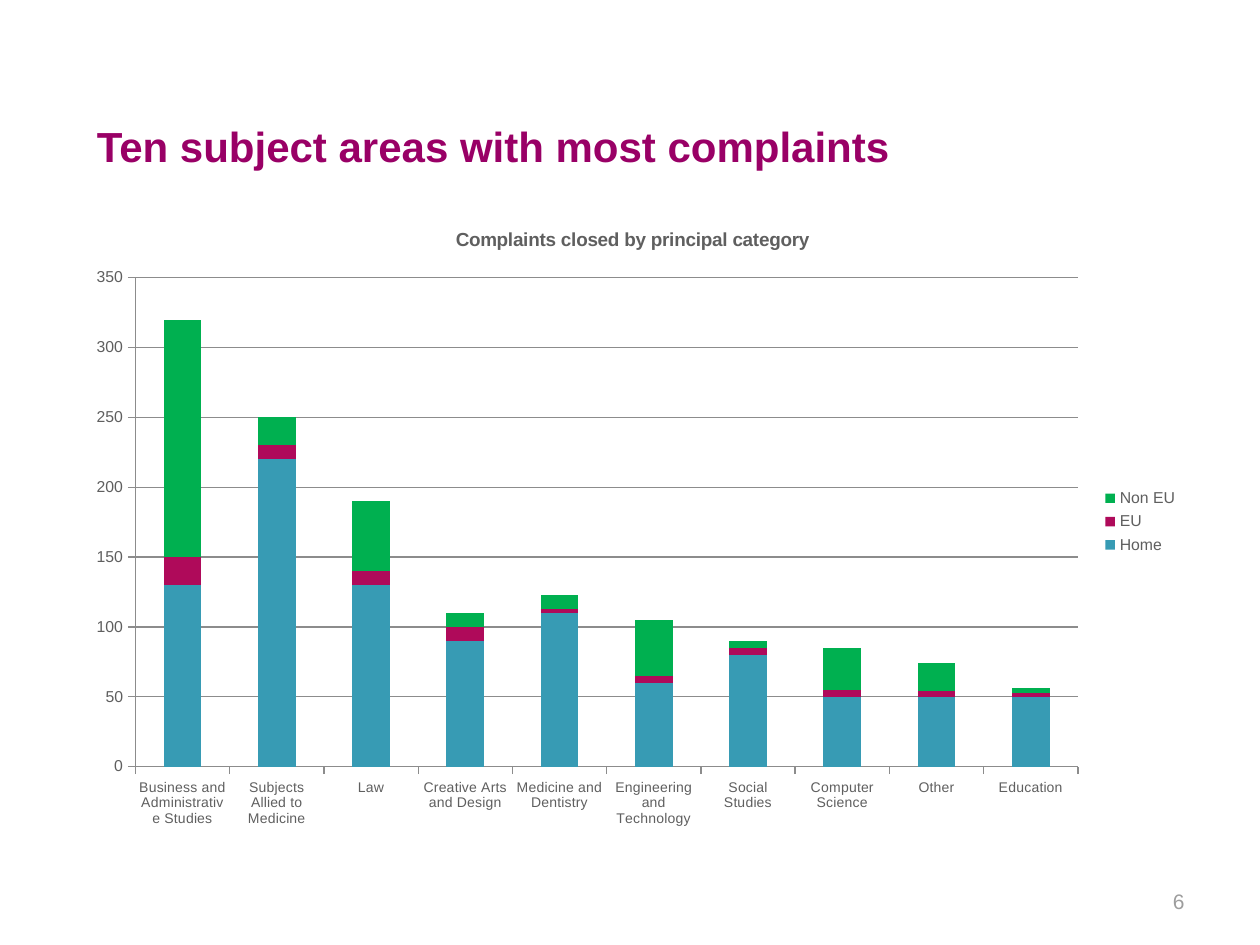
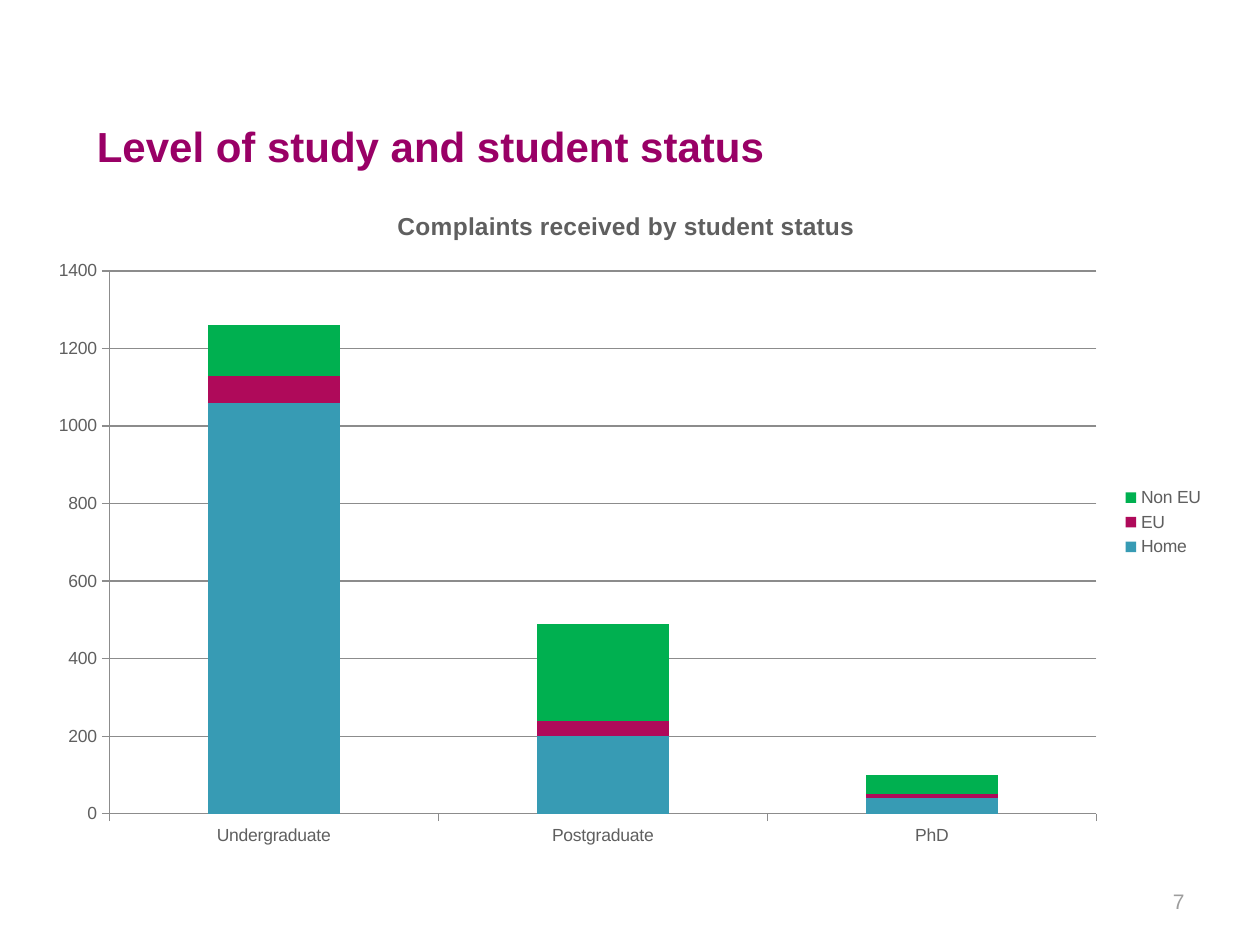
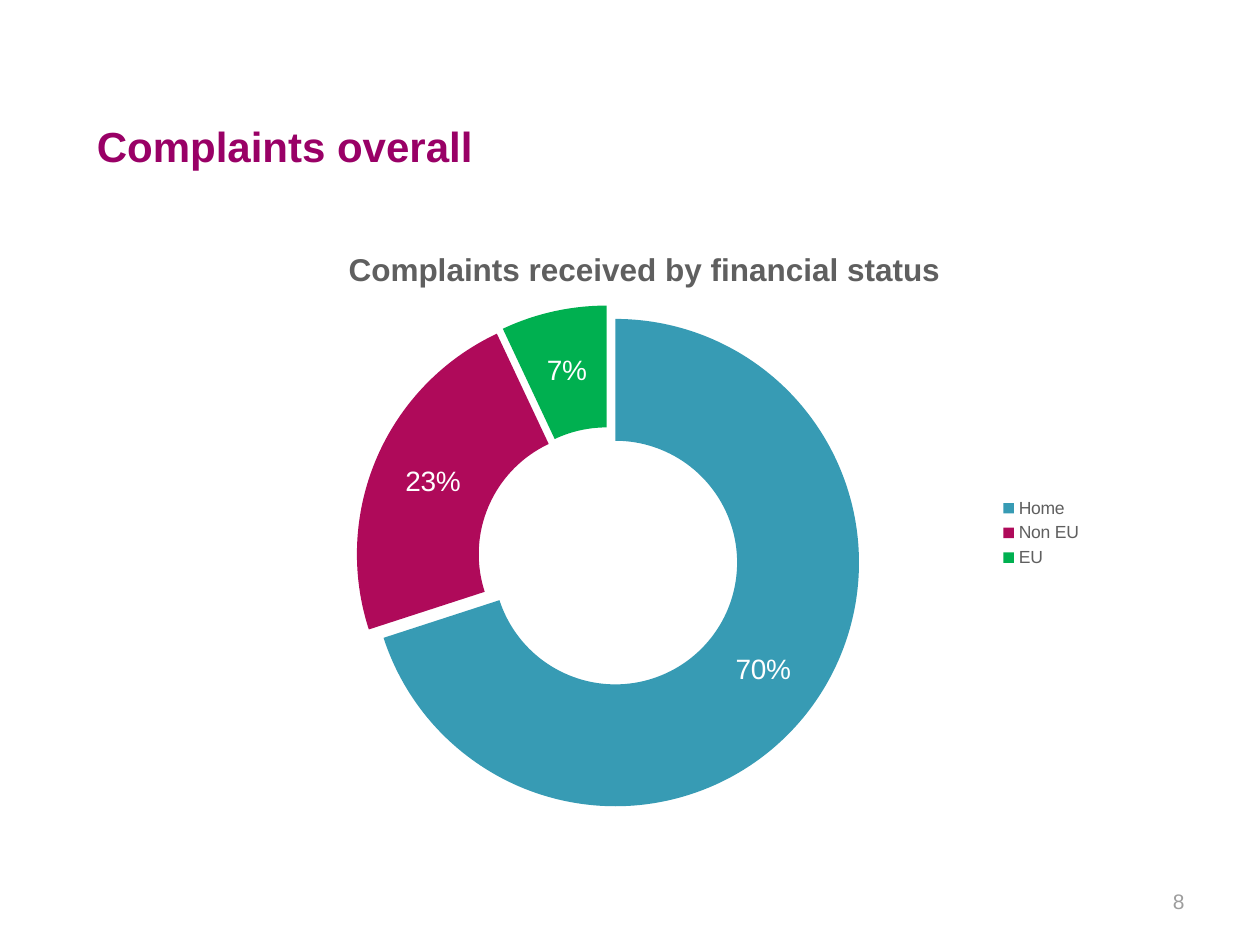
"""Build three slides of charts on student complaints."""
from lxml.etree import SubElement
from pptx import Presentation
from pptx.chart.data import CategoryChartData as Data
from pptx.dml.color import RGBColor
from pptx.enum.chart import XL_CHART_TYPE as Kind, XL_LEGEND_POSITION as Side, XL_TICK_MARK as Tick
from pptx.enum.text import MSO_ANCHOR as Anchor, PP_ALIGN as Align
from pptx.oxml.ns import qn
from pptx.util import Inches, Pt

PLUM = RGBColor(0x99, 0x00, 0x66)
GREY = RGBColor(0x5F, 0x5F, 0x5F)
PALE = RGBColor(0x9D, 0x9D, 0x9D)
RULE = RGBColor(0x8C, 0x8C, 0x8C)
WHITE = RGBColor(0xFF, 0xFF, 0xFF)
HUES = [RGBColor(0x37, 0x9B, 0xB4), RGBColor(0xAF, 0x0A, 0x5A), RGBColor(0x00, 0xB0, 0x50)]
FONT = "Arial"
FIRST = 6

SLIDES = [
    {
        "head": "Ten subject areas with most complaints",
        "title": "Complaints closed by principal category",
        "box": (0.59, 1.62, 8.86, 5.04),
        "size": 9, "title_size": 10.8, "cat_size": 8, "top": 350, "step": 50,
        "cats": ["Business and Administrative Studies", "Subjects Allied to Medicine", "Law",
                 "Creative Arts and Design", "Medicine and Dentistry",
                 "Engineering and Technology", "Social Studies", "Computer Science",
                 "Other", "Education"],
        "rows": {
            "Home": [130, 220, 130, 90, 110, 60, 80, 50, 50, 50],
            "EU": [20, 10, 10, 10, 3, 5, 5, 5, 4, 3],
            "Non EU": [170, 20, 50, 10, 10, 40, 5, 30, 20, 3],
        },
    },
    {
        "head": "Level of study and student status",
        "title": "Complaints received by student status",
        "box": (0.28, 1.47, 9.38, 5.35),
        "size": 10, "title_size": 14, "cat_size": 10, "top": 1400, "step": 200,
        "cats": ["Undergraduate", "Postgraduate", "PhD"],
        "rows": {"Home": [1060, 200, 40], "EU": [70, 40, 10], "Non EU": [130, 250, 50]},
    },
    {
        "head": "Complaints overall",
        "title": "Complaints received by financial status",
        "box": (1.54, 1.78, 7.15, 4.9),
        "size": 10, "title_size": 18, "ring": (0.18, 0.13, 0.56, 0.82),
        "cats": ["Home", "Non EU", "EU"],
        "rows": {"Series 1": [0.7, 0.23, 0.07]},
    },
]


def style(font, size, hue, bold=False):
    """Set the look of a font."""
    font.name, font.size, font.bold = FONT, Pt(size), bold
    font.color.rgb = hue


def write(slide, text, box, size, hue, bold=False, align=Align.LEFT):
    """Add one line of text."""
    frame = slide.shapes.add_textbox(*map(Inches, box)).text_frame
    frame.word_wrap = True
    frame.vertical_anchor = Anchor.MIDDLE
    para = frame.paragraphs[0]
    para.alignment = align
    run = para.add_run()
    run.text = text
    style(run.font, size, hue, bold)


def paint(part, hue):
    """Fill a bar or slice."""
    part.format.fill.solid()
    part.format.fill.fore_color.rgb = hue


def rule(line):
    """Draw a thin grey line."""
    line.color.rgb = RULE
    line.width = Pt(0.75)


def stack(chart, page):
    """Format stacked columns and their axes."""
    plot = chart.plots[0]
    plot.gap_width, plot.overlap = 150, 100
    plot.vary_by_categories = False
    for row, hue in zip(plot.series, HUES):
        paint(row, hue)
    cat, val = chart.category_axis, chart.value_axis
    for axis in (cat, val):
        axis.major_tick_mark, axis.minor_tick_mark = Tick.OUTSIDE, Tick.NONE
        rule(axis.format.line)
    style(cat.tick_labels.font, page["cat_size"], GREY)
    val.minimum_scale, val.maximum_scale = 0, page["top"]
    val.major_unit = page["step"]
    val.has_major_gridlines = True
    rule(val.major_gridlines.format.line)


def ring(chart, page):
    """Format the ring, its gaps and its labels."""
    plot = chart.plots[0]
    plot.vary_by_categories = True
    row = plot.series[0]
    gap = SubElement(row._element, qn("c:explosion"), val="7")
    row._element.find(qn("c:tx")).addnext(gap)
    for spot, hue in enumerate(HUES):
        paint(row.points[spot], hue)
    plot.has_data_labels = True
    tags = plot.data_labels
    tags.show_value, tags.show_percentage = True, False
    tags.number_format, tags.number_format_is_linked = "0%", False
    style(tags.font, 16, WHITE)
    area = chart._chartSpace.chart.plotArea
    base = area.find(qn("c:layout"))
    if base is None:
        base = SubElement(area, qn("c:layout"))
        area.insert(0, base)
    place = SubElement(base, qn("c:manualLayout"))
    pairs = [("layoutTarget", "inner"), ("xMode", "edge"), ("yMode", "edge")]
    pairs += zip("xywh", page["ring"])
    for name, val in pairs:
        SubElement(place, qn(f"c:{name}"), val=str(val))


def draw(slide, page):
    """Add the chart of a page."""
    data = Data()
    data.categories = page["cats"]
    for name, vals in page["rows"].items():
        data.add_series(name, vals)
    kind, form = (Kind.DOUGHNUT, ring) if "ring" in page else (Kind.COLUMN_STACKED, stack)
    chart = slide.shapes.add_chart(kind, *map(Inches, page["box"]), data).chart
    style(chart.font, page["size"], GREY)
    chart.has_title = True
    run = chart.chart_title.text_frame.paragraphs[0].add_run()
    run.text = page["title"]
    style(run.font, page["title_size"], GREY, True)
    chart.has_legend = True
    chart.legend.position = Side.RIGHT
    chart.legend.include_in_layout = False
    form(chart, page)


def main():
    """Build and save the deck."""
    deck = Presentation()
    deck.slide_width, deck.slide_height = Inches(10), Inches(7.5)
    for num, page in enumerate(SLIDES, FIRST):
        slide = deck.slides.add_slide(deck.slide_layouts[6])
        write(slide, page["head"], (0.67, 0.84, 7.48, 0.63), 24, PLUM, bold=True)
        write(slide, str(num), (7.17, 6.95, 2.33, 0.4), 12, PALE, align=Align.RIGHT)
        draw(slide, page)
    deck.save("out.pptx")


if __name__ == "__main__":
    main()
